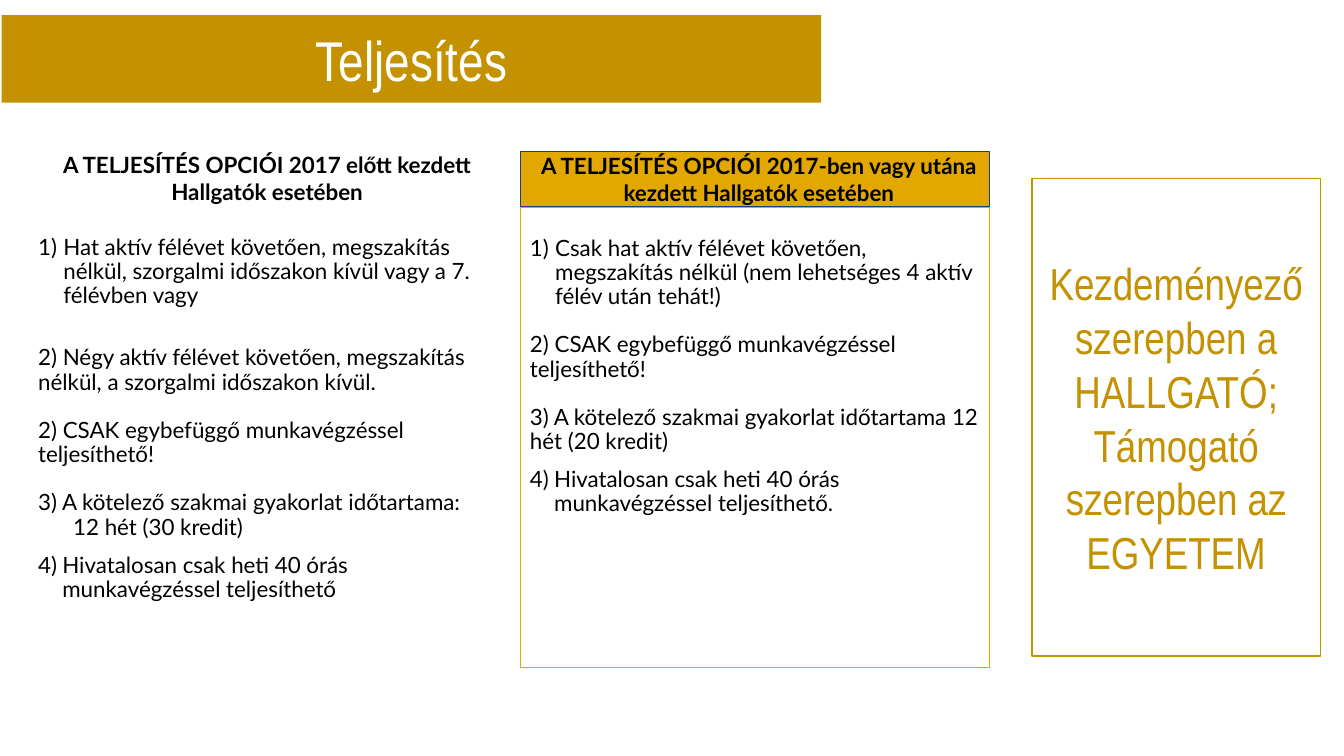
from dataclasses import dataclass

from lxml.etree import SubElement
from pptx import Presentation
from pptx.dml.color import RGBColor
from pptx.enum.shapes import MSO_SHAPE as Preset
from pptx.enum.text import MSO_ANCHOR as Anchor, MSO_AUTO_SIZE as AutoSize, PP_ALIGN as Align
from pptx.oxml.ns import qn
from pptx.util import Pt

COLORS = {
    "gold": "C49100",
    "amber": "E2A700",
    "navy": "1D427B",
    "white": "FFFFFF",
    "black": "000000",
}
DISPLAY = "Arial Narrow"
BODY = "Lato"
LINE_GAP = 17.28
HEADER_HEIGHT = 39.6
HEADER_STEP = 40.3


@dataclass
class Box:
    left: float
    top: float
    width: float
    height: float

    def lengths(self):
        return [Pt(n) for n in (self.left, self.top, self.width, self.height)]


@dataclass
class Item:
    text: str
    before: float = LINE_GAP
    hang: float = 0
    number: int = 0


def color(name):
    return RGBColor.from_string(COLORS[name])


def paint(shape, fill, line, weight):
    if fill:
        shape.fill.solid()
        shape.fill.fore_color.rgb = color(fill)
    else:
        shape.fill.background()
    if line:
        shape.line.color.rgb = color(line)
        shape.line.width = Pt(weight)
    else:
        shape.line.fill.background()


def add_box(page, box, fill, line, weight):
    shape = page.shapes.add_shape(Preset.RECTANGLE, *box.lengths())
    shape.shadow.inherit = False
    paint(shape, fill, line, weight)
    shape.text_frame.word_wrap = True
    return shape


def style(para, font, size, tint, bold=False, align=Align.LEFT):
    para.alignment = align
    for span in para.runs:
        span.font.name = font
        span.font.size = Pt(size)
        span.font.bold = bold
        span.font.color.rgb = color(tint)


def indent(para, hang, number):
    props = para._p.get_or_add_pPr()
    props.set("marL", str(Pt(hang)))
    props.set("indent", str(-Pt(hang)))
    if number:
        bullet = SubElement(props, qn("a:buAutoNum"), type="arabicParenR")
        if number > 1:
            bullet.set("startAt", str(number))


def place_title(page, box, text):
    title = page.shapes.title
    title.left, title.top, title.width, title.height = box.lengths()
    paint(title, "gold", None, 0)
    frame = title.text_frame
    frame.text = text
    frame.auto_size = AutoSize.NONE
    frame.vertical_anchor = Anchor.MIDDLE
    style(frame.paragraphs[0], DISPLAY, 40, "white", align=Align.CENTER)


def place_column(page, box, heading, items, fill, header_line, body_line):
    body_box = Box(box.left, box.top + HEADER_STEP, box.width, box.height - HEADER_STEP)
    frame = add_box(page, body_box, None, body_line, 0.75).text_frame
    frame.vertical_anchor = Anchor.TOP
    frame.margin_top = Pt(3.6 + LINE_GAP)
    for index, item in enumerate(items):
        para = frame.add_paragraph() if index else frame.paragraphs[0]
        para.text = item.text
        para.line_spacing = 0.9
        para.space_before = Pt(item.before)
        style(para, BODY, 16, "black")
        indent(para, item.hang, item.number)

    header_box = Box(box.left, box.top, box.width, HEADER_HEIGHT)
    frame = add_box(page, header_box, fill, header_line, 0.5).text_frame
    frame.margin_left = Pt(5.76)
    frame.margin_top = frame.margin_right = frame.margin_bottom = 0
    frame.vertical_anchor = Anchor.MIDDLE
    frame.text = heading
    style(frame.paragraphs[0], BODY, 16, "black", True, Align.CENTER)


def place_callout(page, box, text):
    frame = add_box(page, box, None, "gold", 1).text_frame
    frame.vertical_anchor = Anchor.MIDDLE
    frame.text = text
    style(frame.paragraphs[0], DISPLAY, 32, "gold", align=Align.CENTER)


def build_page(deck):
    page = deck.slides.add_slide(deck.slide_layouts[5])
    place_title(page, Box(1.2, 10.8, 585.4, 62.6), "Teljesítés")
    place_column(
        page,
        Box(20.2, 107.3, 335.5, 368.6),
        "A TELJESÍTÉS OPCIÓI 2017 előtt kezdett Hallgatók esetében",
        [
            Item("Hat aktív félévet követően, megszakítás nélkül, szorgalmi időszakon "
                 "kívül vagy a 7. félévben vagy", 0, 18, 1),
            Item("2) Négy aktív félévet követően, megszakítás nélkül, a szorgalmi "
                 "időszakon kívül.", LINE_GAP + 10),
            Item("2) CSAK egybefüggő munkavégzéssel teljesíthető!"),
            Item("3) A kötelező szakmai gyakorlat időtartama:\v12 hét (30 kredit)", hang=25),
            Item("Hivatalosan csak heti 40 órás munkavégzéssel teljesíthető", 10, 17.3, 4),
        ],
        "white", "white", "white",
    )
    place_column(
        page,
        Box(371.5, 108, 335.5, 368.6),
        "A TELJESÍTÉS OPCIÓI 2017-ben vagy utána kezdett Hallgatók esetében",
        [
            Item("Csak hat aktív félévet követően, megszakítás nélkül (nem lehetséges "
                 "4 aktív félév után tehát!)", 0, 18, 1),
            Item("2) CSAK egybefüggő munkavégzéssel teljesíthető!"),
            Item("3) A kötelező szakmai gyakorlat időtartama 12 hét (20 kredit)"),
            Item("Hivatalosan csak heti 40 órás munkavégzéssel teljesíthető.", 10, 17.3, 4),
        ],
        "amber", "navy", "amber",
    )
    place_callout(
        page,
        Box(737.3, 127.4, 205.9, 341.3),
        "Kezdeményező szerepben a HALLGATÓ; Támogató szerepben az EGYETEM",
    )


def main():
    deck = Presentation()
    deck.slide_width, deck.slide_height = Pt(960), Pt(540)
    build_page(deck)
    deck.save("out.pptx")


if __name__ == "__main__":
    main()
